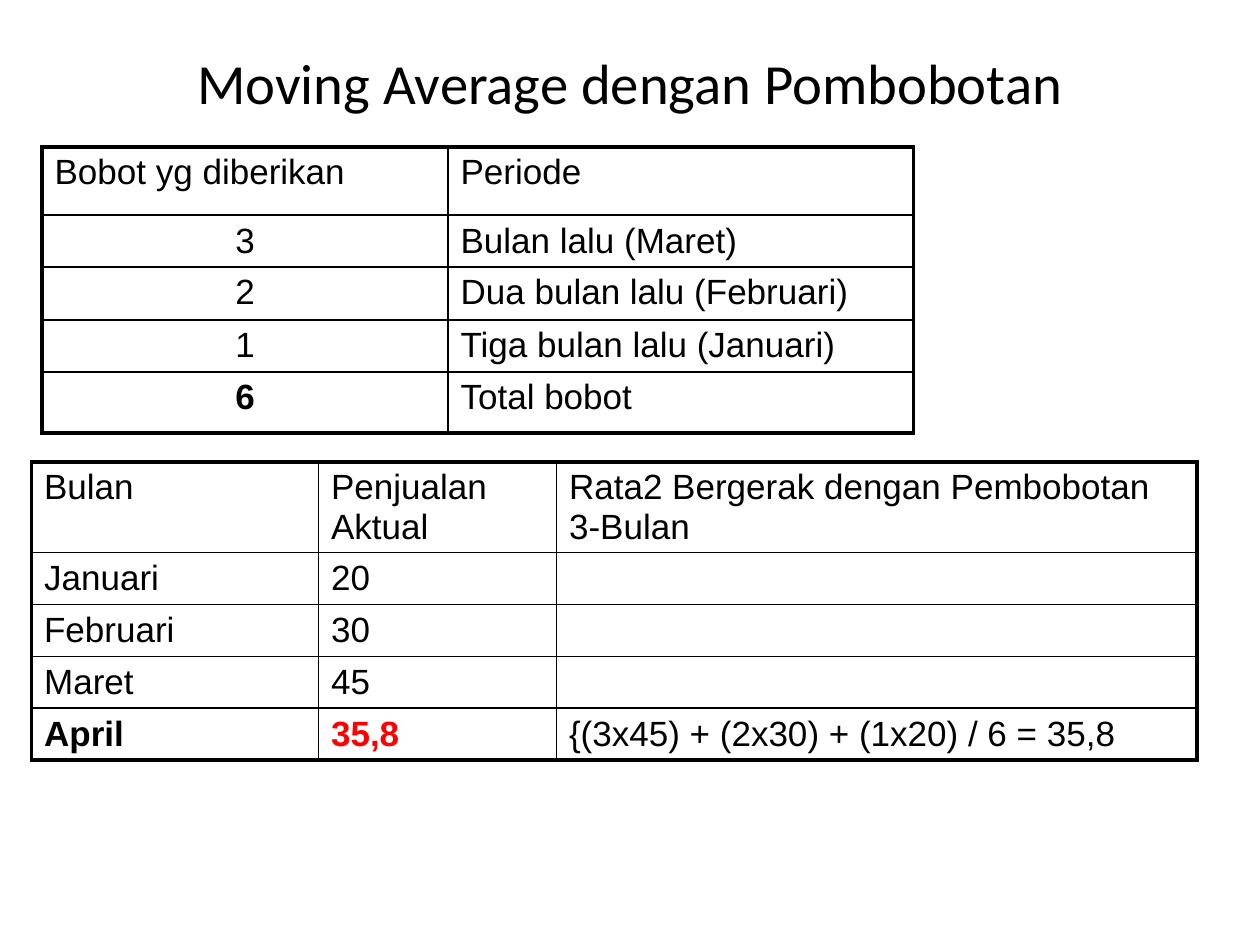
from lxml.etree import SubElement
from pptx import Presentation
from pptx.dml.color import RGBColor
from pptx.enum.text import MSO_ANCHOR, PP_ALIGN
from pptx.oxml.ns import qn
from pptx.util import Pt

COLORS = {"ink": "000000", "forecast": "FF0000"}
TITLE = "Moving Average dengan Pombobotan"

# Sizes in points; "bold" and "red" hold (row, column) positions
SALES = {
    "left": 18, "top": 264,
    "columns": [164, 136, 366],
    "heights": [51.5, 29.6, 29.6, 29.6, 29.6],
    "rows": [
        ["Bulan", "Penjualan Aktual", "Rata2 Bergerak dengan Pembobotan 3-Bulan"],
        ["Januari", "20", ""],
        ["Februari", "30", ""],
        ["Maret", "45", ""],
        ["April", "35,8", "{(3x45) + (2x30) + (1x20) / 6 = 35,8"],
    ],
    "bold": {(4, 0), (4, 1)}, "red": {(4, 1)}, "centered_column": None,
}
WEIGHTS = {
    "left": 24, "top": 84,
    "columns": [232, 266],
    "heights": [38.9, 29.7, 30.3, 29.7, 34.9],
    "rows": [
        ["Bobot yg diberikan", "Periode"],
        ["3", "Bulan lalu (Maret)"],
        ["2", "Dua bulan lalu (Februari)"],
        ["1", "Tiga bulan lalu (Januari)"],
        ["6", "Total bobot"],
    ],
    "bold": {(4, 0)}, "red": set(), "centered_column": 0,
}


def add_text(paragraph, text, font, size, color="ink", bold=False):
    span = paragraph.add_run()
    span.text = text
    span.font.name = font
    span.font.size = Pt(size)
    span.font.bold = bold
    span.font.color.rgb = RGBColor.from_string(COLORS[color])


def draw_borders(cell, outer_sides):
    """Thick lines on the table's outline, thin lines inside."""
    properties = cell._tc.get_or_add_tcPr()
    for side, is_outer in outer_sides.items():
        width = Pt(2.25 if is_outer else 1)
        line = SubElement(properties, qn(f"a:ln{side}"), w=str(width))
        fill = SubElement(line, qn("a:solidFill"))
        SubElement(fill, qn("a:srgbClr"), val=COLORS["ink"])


def add_grid(page, data):
    rows, columns, heights = data["rows"], data["columns"], data["heights"]
    table = page.shapes.add_table(
        len(rows), len(columns), Pt(data["left"]), Pt(data["top"]),
        Pt(sum(columns)), Pt(sum(heights))).table
    table.first_row = table.horz_banding = False
    for column, width in zip(table.columns, columns):
        column.width = Pt(width)
    for row, height in zip(table.rows, heights):
        row.height = Pt(height)

    for r, texts in enumerate(rows):
        for c, text in enumerate(texts):
            cell = table.cell(r, c)
            draw_borders(cell, {"L": c == 0, "R": c == len(columns) - 1,
                                "T": r == 0, "B": r == len(rows) - 1})
            cell.fill.background()
            paragraph = cell.text_frame.paragraphs[0]
            if c == data["centered_column"] and r > 0:
                paragraph.alignment = PP_ALIGN.CENTER
            if text:
                add_text(paragraph, text, "Arial", 20,
                         "forecast" if (r, c) in data["red"] else "ink",
                         (r, c) in data["bold"])


def main():
    deck = Presentation()
    deck.slide_width, deck.slide_height = Pt(720), Pt(540)
    page = deck.slides.add_slide(deck.slide_layouts[5])

    # Title
    title = page.shapes.title
    title.left, title.top, title.width, title.height = Pt(36), Pt(21.6), Pt(648), Pt(50.4)
    title.text_frame.vertical_anchor = MSO_ANCHOR.MIDDLE
    paragraph = title.text_frame.paragraphs[0]
    paragraph.alignment = PP_ALIGN.CENTER
    add_text(paragraph, TITLE, "Calibri", 32.4)

    # Tables
    for data in (SALES, WEIGHTS):
        add_grid(page, data)

    deck.save("out.pptx")


if __name__ == "__main__":
    main()
